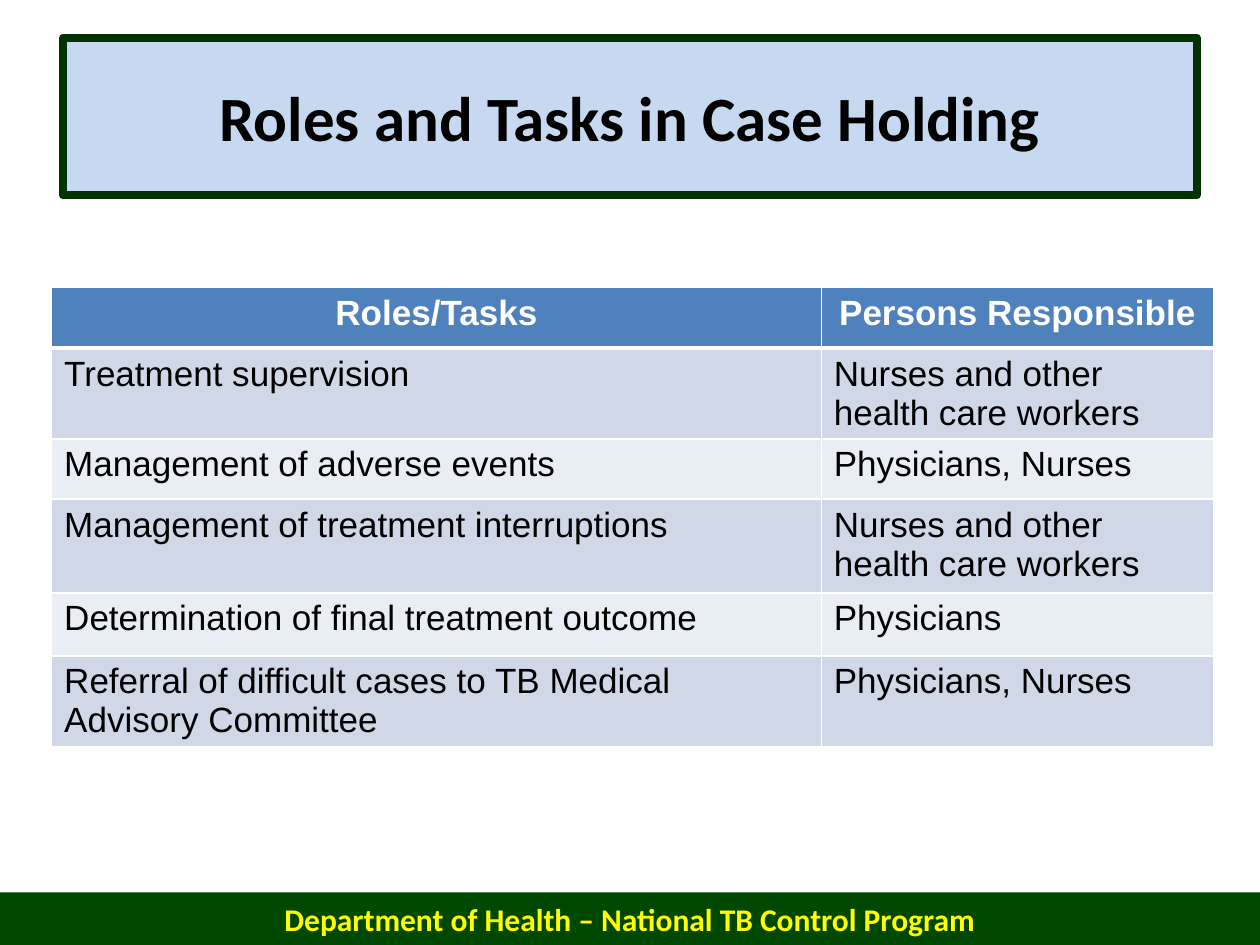
from lxml.etree import SubElement
from pptx import Presentation
from pptx.dml.color import RGBColor
from pptx.enum.shapes import MSO_SHAPE as Shape
from pptx.enum.text import MSO_ANCHOR as Anchor, PP_ALIGN as Align
from pptx.oxml.ns import qn
from pptx.util import Pt

COLORS = {
    "title_fill": "C6D9F1", "title_border": "003300", "footer_fill": "004800",
    "footer_text": "FFFF00", "header": "4F81BD", "odd_row": "D0D8E8",
    "even_row": "E9EDF4", "white": "FFFFFF", "black": "000000",
}
RESPONSIBILITIES = [
    ("Roles/Tasks", "Persons Responsible"),
    ("Treatment supervision", "Nurses and other health care workers"),
    ("Management of adverse events", "Physicians, Nurses"),
    ("Management of treatment interruptions", "Nurses and other health care workers"),
    ("Determination of final treatment outcome", "Physicians"),
    ("Referral of difficult cases to TB Medical Advisory Committee", "Physicians, Nurses"),
]


class SlideBuilder:
    def __init__(self, slide):
        self.slide = slide
        self.heading_font = "Calibri"
        self.table_font = "Arial"
        self.table_size = 20

    def color(self, name):
        return RGBColor.from_string(COLORS[name])

    def set_text(self, frame, text, font, size, color, bold=False, align=Align.LEFT):
        frame.text = text
        paragraph = frame.paragraphs[0]
        paragraph.alignment = align
        style = paragraph.runs[0].font
        style.name, style.size, style.bold = font, Pt(size), bold
        style.color.rgb = self.color(color)

    def banner(self, box, text, size, fill, color, border=None, border_width=0):
        banner = self.slide.shapes.add_shape(Shape.RECTANGLE, *map(Pt, box))
        banner.shadow.inherit = False
        banner.fill.solid()
        banner.fill.fore_color.rgb = self.color(fill)
        if border:
            banner.line.color.rgb = self.color(border)
            banner.line.width = Pt(border_width)
        else:
            banner.line.fill.background()
        banner.text_frame.word_wrap = True
        banner.text_frame.vertical_anchor = Anchor.MIDDLE
        self.set_text(banner.text_frame, text, self.heading_font, size, color, True, Align.CENTER)

    def borders(self, cell, bottom):
        properties = cell._tc.get_or_add_tcPr()
        sides = {"lnL": 1, "lnR": 1, "lnT": 1, "lnB": bottom}
        for position, (side, width) in enumerate(sides.items()):
            line = SubElement(properties, qn(f"a:{side}"), w=str(Pt(width)))
            properties.insert(position, line)
            fill = SubElement(line, qn("a:solidFill"))
            SubElement(fill, qn("a:srgbClr"), val=COLORS["white"])

    def table(self, box, rows, widths, heights):
        frame = self.slide.shapes.add_table(len(rows), len(widths), *map(Pt, box))
        grid = frame.table
        for column, width in zip(grid.columns, widths):
            column.width = Pt(width)
        for index, (row, height, texts) in enumerate(zip(grid.rows, heights, rows)):
            row.height = Pt(height)
            header = index == 0
            fill = "header" if header else "odd_row" if index % 2 else "even_row"
            for cell, text in zip(row.cells, texts):
                cell.fill.solid()
                cell.fill.fore_color.rgb = self.color(fill)
                self.borders(cell, 3 if header else 1)
                self.set_text(cell.text_frame, text, self.table_font, self.table_size,
                              "white" if header else "black", header,
                              Align.CENTER if header else Align.LEFT)
        frame.height = Pt(box[3])


def main():
    deck = Presentation()
    deck.slide_width, deck.slide_height = Pt(720), Pt(540)
    builder = SlideBuilder(deck.slides.add_slide(deck.slide_layouts[6]))
    builder.banner((36, 21.6, 648, 90), "Roles and Tasks in Case Holding", 36,
                   "title_fill", "black", "title_border", 4.5)
    builder.table((29.5, 164.4, 664, 270), RESPONSIBILITIES,
                  (439.8, 224.2), (34.5, 41, 34.5, 53.5, 36, 47.5))
    builder.banner((0, 510, 720, 30), "Department of Health – National TB Control Program", 18,
                   "footer_fill", "footer_text")
    deck.save("out.pptx")


if __name__ == "__main__":
    main()
